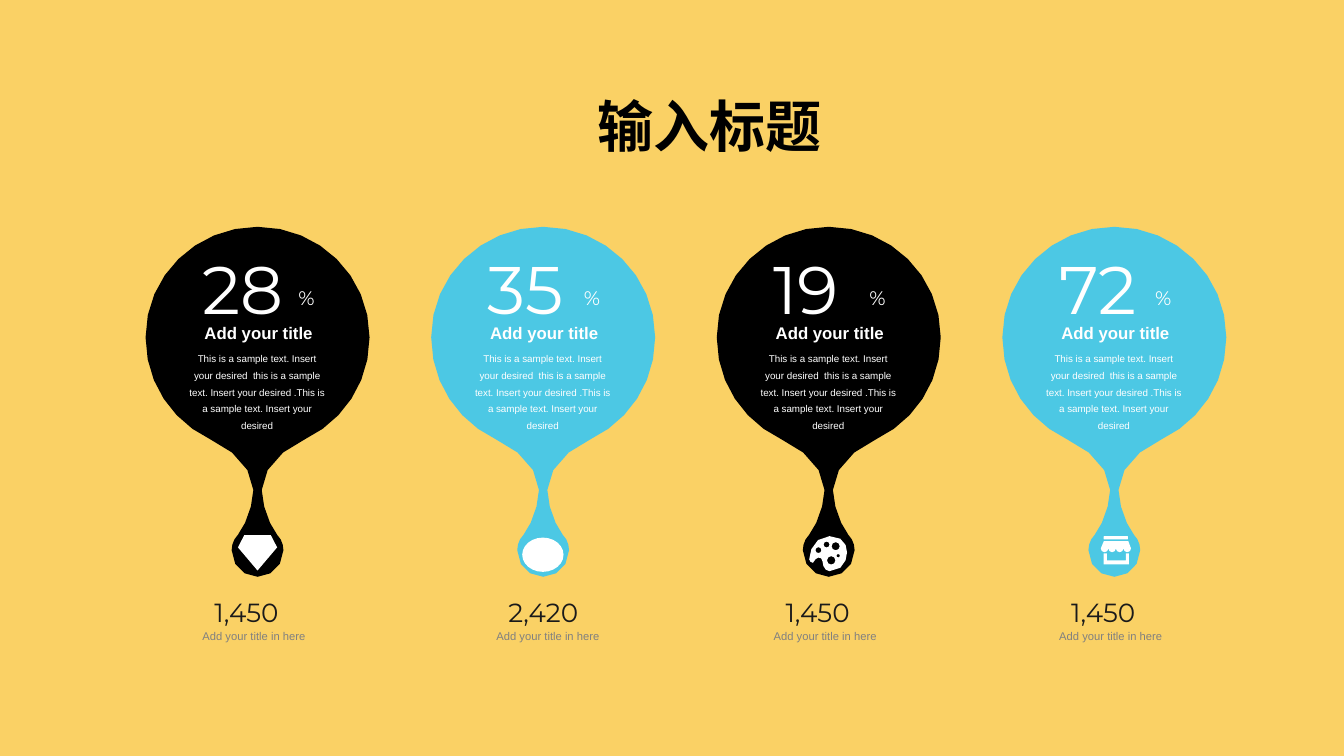
import math

from lxml import etree
from pptx import Presentation, util as u
from pptx.dml import color
from pptx.enum import shapes, text
from pptx.oxml import ns

BLACK, BLUE, WHITE = "000000", "4CC8E4", "FFFFFF"
SANS, THIN = "Arial", "Montserrat"
BODY = ("This is a sample text. Insert your desired  this is a sample text. "
        "Insert your desired .This is a sample text. Insert your desired")

# Columns: fill, percent, total, shift of the footer
COLS = [(BLACK, "28", "1,450", 0), (BLUE, "35", "2,420", 6),
        (BLACK, "19", "1,450", 0), (BLUE, "72", "1,450", 0)]
FIRST, STEP = 184, 204

# Left half of a drop, as curve points around its axis
HALF = [(0, 162), (-44, 162), (-80, 197), (-80, 241),
        (-80, 273.5), (-61, 301), (-33.5, 314),
        (-17, 321), (-3, 335.5), (-3, 350),
        (-3, 361), (-9, 376), (-14, 382),
        (-17, 385), (-18.5, 389), (-18.5, 393),
        (-18.5, 404), (-10, 412), (0, 412)]

# Palette icon: outline curve and paint holes (x, y, radius)
BLOB = [(0.5, 383), (-9.5, 383), (-14, 393), (-14, 399.5),
        (-14, 401), (-11, 404.5), (-9.5, 399.5),
        (-8, 397.5), (-4.5, 398), (-4.5, 401),
        (-4.5, 404.5), (-2.5, 408), (0.5, 408),
        (10.5, 408), (13, 399.5), (13, 394.5),
        (13, 389.5), (10.5, 383), (0.5, 383)]
HOLES = [(-7.4, 393, 2.1), (-1.6, 389, 2.1), (1.7, 400.3, 3),
         (6.7, 397, 1.2), (4.9, 390.2, 2.9)]
GEM = [(-9.5, 382.3), (9.5, 382.3), (14, 391), (0, 407.5), (-14, 391)]


def rgb(code):
    return color.RGBColor.from_string(code)


def paint(shape, code):
    shape.shadow.inherit = False
    shape.fill.solid()
    shape.fill.fore_color.rgb = rgb(code)
    shape.line.fill.background()


def box(deck, kind, x, y, w, h, code):
    shape = deck.add_shape(kind, u.Pt(x), u.Pt(y), u.Pt(w), u.Pt(h))
    paint(shape, code)


def write(deck, x, y, w, h, words, size, font, code, bold=False,
          wrap=False, grow=True, align=None, space=None):
    frame = deck.add_textbox(u.Pt(x), u.Pt(y), u.Pt(w), u.Pt(h)).text_frame
    frame.word_wrap = wrap
    if grow:
        frame.auto_size = text.MSO_AUTO_SIZE.SHAPE_TO_FIT_TEXT
    para = frame.paragraphs[0]
    para.alignment = align
    para.line_spacing = space
    run = para.add_run()
    run.text = words
    run.font.size = u.Pt(size)
    run.font.name = font
    run.font.bold = bold
    run.font.color.rgb = rgb(code)
    return run


def bend(pts):
    """Turn a chain of cubic curves into points, more on the long ones."""
    out = [pts[0]]
    for k in range(0, len(pts) - 1, 3):
        count = max(3, round(math.dist(pts[k], pts[k + 3]) / 14))
        for n in range(1, count + 1):
            t = n / count
            mix = ((1 - t) ** 3, 3 * t * (1 - t) ** 2, 3 * t * t * (1 - t), t ** 3)
            out.append(tuple(sum(m * p[d] for m, p in zip(mix, pts[k:k + 4]))
                             for d in (0, 1)))
    return out


def ring(x, y, r, sweep=360, count=8):
    turns = [math.radians(sweep * n / count) for n in range(count)]
    return [(x + r * math.cos(a), y + r * math.sin(a)) for a in turns]


def trace(deck, mid, loops, code):
    """Draw closed outlines, placed around the axis at mid."""
    loops = [[(u.Pt(mid + x), u.Pt(y)) for x, y in loop] for loop in loops]
    form = deck.build_freeform(*loops[0][0])
    for n, loop in enumerate(loops):
        if n:
            form.move_to(*loop[0])
        form.add_line_segments(loop[1:], close=True)
    paint(form.convert_to_shape(), code)


# Icons
def gem(deck, mid):
    trace(deck, mid, [GEM], WHITE)


def spot(deck, mid):
    box(deck, shapes.MSO_SHAPE.OVAL, mid - 15, 384, 29.5, 24.5, WHITE)


def palette(deck, mid):
    trace(deck, mid, [bend(BLOB)] + [ring(*hole) for hole in HOLES], WHITE)


def shop(deck, mid):
    edge = [(-7.5, 386.6), (10, 386.6)]
    for n in range(4):
        edge += ring(9.2 - 5.4 * n, 391.8, 2.7, 180, 4)
    edge.append((-9.7, 391.8))
    base = [(-7.6, 395.3), (-5.4, 395.3), (-5.4, 400.3), (8.2, 400.3),
            (8.2, 395.3), (10.4, 395.3), (10.4, 403.2), (-7.6, 403.2)]
    trace(deck, mid, [edge, base], WHITE)
    box(deck, shapes.MSO_SHAPE.ROUNDED_RECTANGLE, mid - 7.6, 383, 17.3, 2.3, WHITE)


def column(deck, mid, code, rate, total, shift, icon):
    # Drop and icon
    half = bend(HALF)
    trace(deck, mid, [half + [(-x, y) for x, y in half[-2:0:-1]]], code)
    icon(deck, mid)
    # Text in the drop
    write(deck, mid - 45, 226.8, 96.5, 21.6, "Add your title", 12, SANS, WHITE, True)
    write(deck, mid - 46.5, 172.8, 79.2, 65.5, rate, 48, THIN, WHITE)
    write(deck, mid + 22, 200.9, 28.8, 24.5, "%", 14, THIN, WHITE)
    write(deck, mid - 56.5, 244.8, 112.3, 67.7, BODY, 7, SANS, WHITE, wrap=True,
          align=text.PP_ALIGN.CENTER, space=u.Pt(12))
    # Footer
    foot = deck.add_group_shape().shapes
    write(foot, mid - 38 + shift, 422.6, 71.3, 30.2, total, 18.7, THIN, "1A1A1A")
    write(foot, mid - 46.5 + shift, 445.7, 89.3, 17.3,
          "Add your title in here", 8, SANS, "808080")


def main():
    show = Presentation()
    show.slide_width, show.slide_height = u.Pt(960), u.Pt(540)
    deck = show.slides.add_slide(show.slide_layouts[6]).shapes

    # Backdrop
    box(deck, shapes.MSO_SHAPE.RECTANGLE, 0, 0, 960, 540, "FAD165")

    # Four drops
    icons = (gem, spot, palette, shop)
    for n, (col, icon) in enumerate(zip(COLS, icons)):
        column(deck, FIRST + STEP * n, *col, icon)

    # Heading, with its East Asian font
    font = "Noto Sans CJK SC"
    head = write(deck, 419.8, 74.9, 316, 87.8, "输入标题", 40, font, BLACK, True,
                 wrap=True, grow=False, space=0.7)
    etree.SubElement(head.font._element, ns.qn("a:ea"), typeface=font)

    show.save("out.pptx")


if __name__ == "__main__":
    main()
